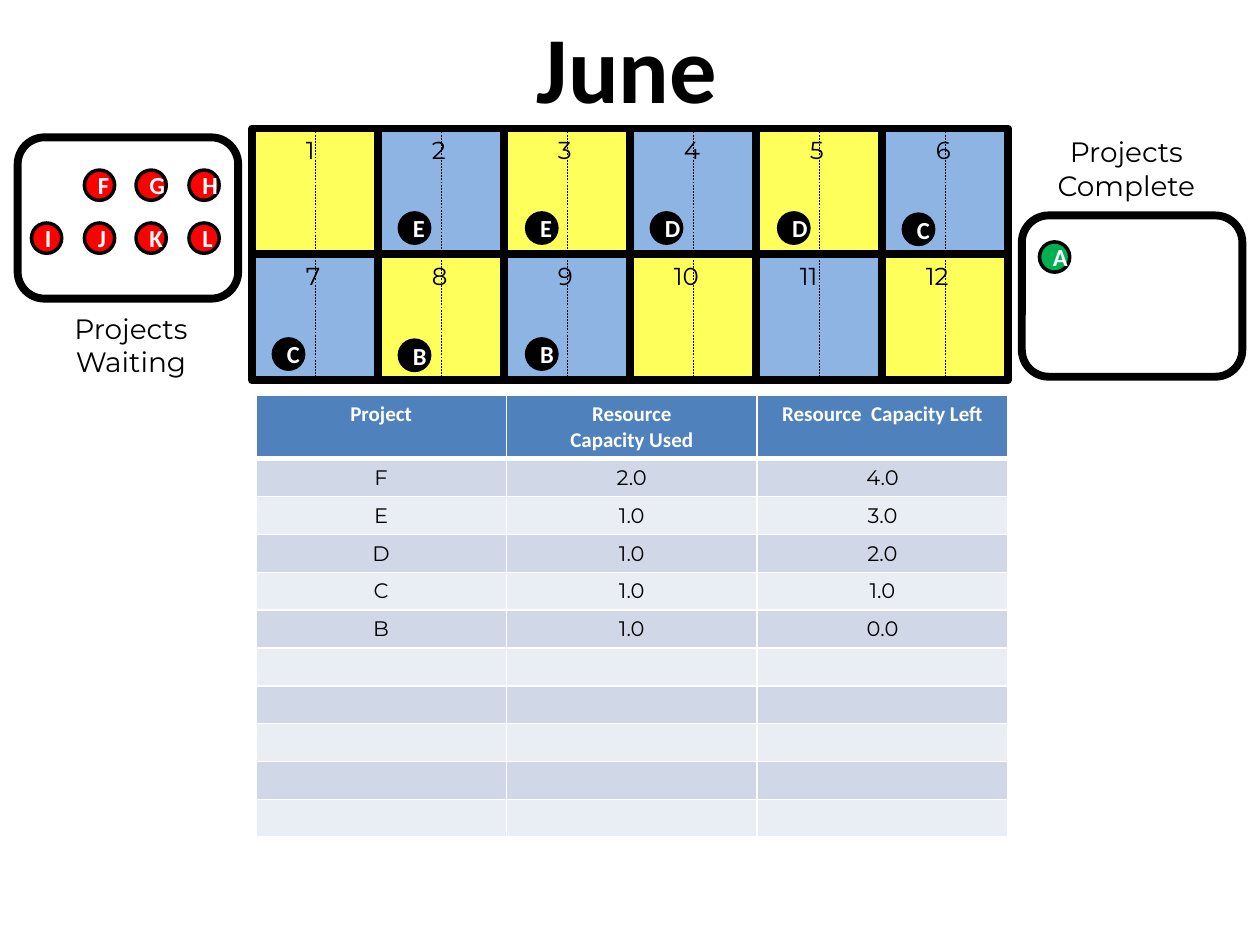
from lxml.etree import SubElement
from pptx import Presentation
from pptx.dml.color import RGBColor
from pptx.enum.dml import MSO_LINE
from pptx.enum.shapes import MSO_CONNECTOR as CONNECTOR, MSO_SHAPE as SHAPE
from pptx.enum.text import MSO_ANCHOR as ANCHOR, MSO_AUTO_SIZE as AUTO, PP_ALIGN as ALIGN
from pptx.oxml.ns import qn
from pptx.util import Inches, Pt

BLACK = RGBColor(0x00, 0x00, 0x00)
WHITE = RGBColor(0xFF, 0xFF, 0xFF)
YELLOW = RGBColor(0xFF, 0xFF, 0x5B)
BLUE = RGBColor(0x8E, 0xB4, 0xE3)
RED = RGBColor(0xFF, 0x00, 0x00)
GREEN = RGBColor(0x00, 0xB0, 0x50)
HEADER = RGBColor(0x4F, 0x81, 0xBD)
BAND_DARK = RGBColor(0xD0, 0xD8, 0xE8)
BAND_LIGHT = RGBColor(0xE9, 0xED, 0xF4)

TITLE = {"name": "Calibri", "size": Pt(54), "bold": True}
LABEL = {"name": "Montserrat", "size": Pt(16)}
NUMBER = {"name": "Montserrat", "size": Pt(14)}
LETTER = {"name": "Calibri", "size": Pt(14), "bold": True}
HEAD_CELL = {"name": "Calibri", "size": Pt(12), "bold": True}
BODY_CELL = {"name": "Montserrat", "size": Pt(12), "bold": False}

GRID_LEFT, GRID_TOP, COLUMNS, ROWS = 2, 1.02, 6, 2

WAITING = [("F", 0.67, 1.35), ("G", 1.08, 1.35), ("H", 1.5, 1.35),
           ("I", 0.25, 1.77), ("J", 0.67, 1.77), ("K", 1.08, 1.77), ("L", 1.5, 1.77)]
ACTIVE = [("E", 3.17, 1.69), ("E", 4.18, 1.69), ("D", 5.17, 1.69),
          ("D", 6.18, 1.69), ("C", 7.17, 1.7),
          ("C", 2.17, 2.69), ("B", 3.17, 2.7), ("B", 4.18, 2.69)]
COMPLETE = [("A", 8.25, 1.92)]

CAPACITY = [
    ("Project", "Resource\nCapacity Used", "Resource  Capacity Left"),
    ("F", "2.0", "4.0"),
    ("E", "1.0", "3.0"),
    ("D", "1.0", "2.0"),
    ("C", "1.0", "1.0"),
    ("B", "1.0", "0.0"),
] + [("", "", "")] * 5


class Board:
    def __init__(self, slide):
        self.shapes = slide.shapes

    def put_text(self, tf, text, style, color=BLACK, align=ALIGN.CENTER):
        for i, line in enumerate(text.split("\n")):
            p = tf.add_paragraph() if i else tf.paragraphs[0]
            p.alignment = align
            if not line:
                end = SubElement(p._p, qn("a:endParaRPr"))
                end.set("sz", str(int(style["size"].pt * 100)))
                SubElement(end, qn("a:latin")).set("typeface", style["name"])
                continue
            r = p.add_run()
            r.text = line
            for key, value in style.items():
                setattr(r.font, key, value)
            r.font.color.rgb = color

    def shape(self, kind, x, y, w, h, fill=None, weight=4.5):
        sp = self.shapes.add_shape(kind, Inches(x), Inches(y), Inches(w), Inches(h))
        sp.shadow.inherit = False
        if fill is None:
            sp.fill.background()
        else:
            sp.fill.solid()
            sp.fill.fore_color.rgb = fill
        sp.line.color.rgb = BLACK
        sp.line.width = Pt(weight)
        return sp

    def ball(self, letter, x, y, fill):
        sp = self.shape(SHAPE.OVAL, x, y, 0.24, 0.24, fill, 2)
        sp.text_frame.vertical_anchor = ANCHOR.MIDDLE
        self.put_text(sp.text_frame, letter, LETTER, WHITE)

    def text(self, text, x, y, w, h, style, align=ALIGN.CENTER, wrap=True):
        sp = self.shapes.add_textbox(Inches(x), Inches(y), Inches(w), Inches(h))
        tf = sp.text_frame
        tf.word_wrap = wrap
        tf.auto_size = AUTO.SHAPE_TO_FIT_TEXT
        self.put_text(tf, text, style, align=align)

    def divider(self, x, top, bottom):
        cx = self.shapes.add_connector(
            CONNECTOR.STRAIGHT, Inches(x), Inches(top), Inches(x), Inches(bottom))
        cx.line.color.rgb = BLACK
        cx.line.width = Pt(0.25)
        cx.line.dash_style = MSO_LINE.DASH
        SubElement(cx._element.spPr, qn("a:effectLst"))

    def border(self, cell, bottom):
        tcPr = cell._tc.get_or_add_tcPr()
        for side, weight in (("L", 1), ("R", 1), ("T", 1), ("B", bottom)):
            ln = SubElement(tcPr, qn(f"a:ln{side}"), w=str(Pt(weight)))
            fill = SubElement(ln, qn("a:solidFill"))
            SubElement(fill, qn("a:srgbClr"), val=str(WHITE))

    def table(self, rows, x, y, w, head_height, row_height):
        height = head_height + row_height * (len(rows) - 1)
        table = self.shapes.add_table(len(rows), len(rows[0]), Inches(x), Inches(y),
                                      Inches(w), Inches(height)).table
        for i, row in enumerate(rows):
            table.rows[i].height = Inches(row_height if i else head_height)
            style, color = (BODY_CELL, BLACK) if i else (HEAD_CELL, WHITE)
            fill = (BAND_DARK if i % 2 else BAND_LIGHT) if i else HEADER
            for j, text in enumerate(row):
                cell = table.cell(i, j)
                self.border(cell, 1 if i else 3)
                cell.fill.solid()
                cell.fill.fore_color.rgb = fill
                self.put_text(cell.text_frame, text, style, color)


def main():
    prs = Presentation()
    prs.slide_width, prs.slide_height = Inches(10), Inches(7.5)
    board = Board(prs.slides.add_slide(prs.slide_layouts[6]))

    cells = [(row, col) for row in range(ROWS) for col in range(COLUMNS)]
    for row, col in cells:
        fill = BLUE if (row + col) % 2 else YELLOW
        board.shape(SHAPE.RECTANGLE, GRID_LEFT + col, GRID_TOP + row, 1, 1, fill)
    for col in range(COLUMNS):
        board.divider(GRID_LEFT + col + 0.5, GRID_TOP, GRID_TOP + ROWS)
    for number, (row, col) in enumerate(cells, 1):
        indent, width = (0.33, 0.42) if number < 10 else (0.25, 0.5)
        board.text(str(number), GRID_LEFT + col + indent, GRID_TOP + row,
                   width, 0.34, NUMBER, ALIGN.LEFT)

    for projects, fill in ((WAITING, RED), (ACTIVE, BLACK), (COMPLETE, GREEN)):
        for letter, x, y in projects:
            board.ball(letter, x, y, fill)

    board.text("June", 4.15, 0.02, 1.65, 1.01, TITLE, wrap=False)
    for label, label_x, label_y, box_x, box_y in (
            ("Projects Waiting", 0.24, 2.42, 0.14, 1.09),
            ("Projects Complete", 8.14, 1.02, 8.11, 1.71)):
        board.shape(SHAPE.ROUNDED_RECTANGLE, box_x, box_y, 1.75, 1.28)
        board.text(label, label_x, label_y, 1.6, 0.64, LABEL)

    board.table(CAPACITY, 2.03, 3.14, 5.97, 0.5, 0.3)
    prs.save("out.pptx")


if __name__ == "__main__":
    main()
